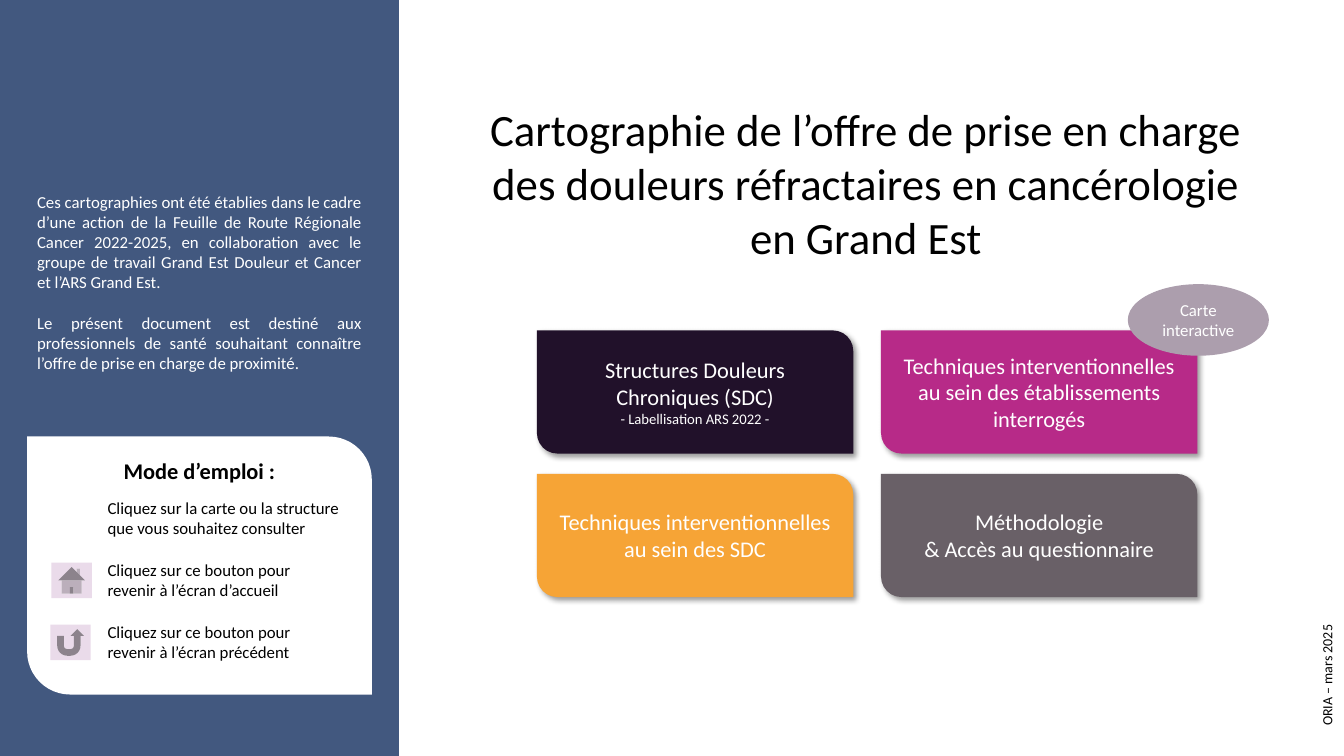
from dataclasses import dataclass

from lxml import etree
from pptx import Presentation
from pptx.dml.color import RGBColor
from pptx.enum.shapes import MSO_SHAPE
from pptx.enum.text import MSO_ANCHOR, MSO_AUTO_SIZE, PP_ALIGN
from pptx.oxml.ns import qn
from pptx.util import Pt

RECT, OVAL = MSO_SHAPE.RECTANGLE, MSO_SHAPE.OVAL
LEAF = MSO_SHAPE.ROUND_2_DIAG_RECTANGLE
HOME, BACK = MSO_SHAPE.ACTION_BUTTON_HOME, MSO_SHAPE.ACTION_BUTTON_RETURN
TOP, MIDDLE = MSO_ANCHOR.TOP, MSO_ANCHOR.MIDDLE
LEFT, CENTER, JUST = PP_ALIGN.LEFT, PP_ALIGN.CENTER, PP_ALIGN.JUSTIFY
GROW = MSO_AUTO_SIZE.SHAPE_TO_FIT_TEXT


@dataclass(frozen=True)
class Theme:
    """Colours, font and type sizes of the slide."""
    font: str = "Calibri"
    black: str = "000000"
    white: str = "FFFFFF"
    navy: str = "42587F"
    night: str = "21112A"
    pink: str = "B72A88"
    amber: str = "F6A436"
    grey: str = "696067"
    mauve: str = "AC9EAD"
    pale: str = "EADBEA"
    title: float = 32
    head: float = 16
    body: float = 12
    small: float = 10.5
    foot: float = 10


THEME = Theme()


def apply(item, values):
    """Set each attribute of item from a dict of values."""
    for name, value in values.items():
        setattr(item, name, value)


def write(shape, lines, color, align=CENTER, gap=0, bold=False, **frame):
    """Fill a shape with (text, size) paragraphs."""
    area = shape.text_frame
    apply(area, {"word_wrap": True, "vertical_anchor": MIDDLE, **frame})
    for i, (text, size) in enumerate(lines):
        para = area.add_paragraph() if i else area.paragraphs[0]
        apply(para, {"alignment": align, "space_before": Pt(gap if i else 0)})
        run = para.add_run()
        run.text = text
        apply(run.font, {"name": THEME.font, "size": Pt(size), "bold": bold})
        run.font.color.rgb = RGBColor.from_string(color)


def add_form(slide, kind, box, fill=None):
    """Add a preset shape without outline or shadow."""
    shape = slide.shapes.add_shape(kind, *map(Pt, box))
    shape.shadow.inherit = False
    shape.line.fill.background()
    if fill:
        shape.fill.solid()
        shape.fill.fore_color.rgb = RGBColor.from_string(fill)
    else:
        shape.fill.background()
    return shape


def add_leaf(slide, box, fill=None):
    """Add a shape rounded at top right and bottom left."""
    shape = add_form(slide, LEAF, box, fill)
    shape.adjustments[0], shape.adjustments[1] = 0, 0.16667
    return shape


def add_shade(shape):
    """Give a shape a soft shadow to the lower right."""
    effect = shape.element.spPr.find(qn("a:effectLst"))
    shade = etree.SubElement(effect, qn("a:outerShdw"), {
        "blurRad": str(Pt(4)), "dist": str(Pt(3)), "dir": "2700000",
        "algn": "tl", "rotWithShape": "0"})
    color = etree.SubElement(shade, qn("a:srgbClr"), val=THEME.black)
    etree.SubElement(color, qn("a:alpha"), val="40000")


def add_note(slide, box, lines, color, **form):
    """Add a text box that grows with its text."""
    note = slide.shapes.add_textbox(*map(Pt, box))
    write(note, lines, color, vertical_anchor=TOP, auto_size=GROW, **form)
    return note


def add_cards(slide):
    """Lay the four topic cards on a two by two grid."""
    head = THEME.head
    cards = [
        (THEME.night, [("Structures Douleurs Chroniques (SDC)", head),
                       ("- Labellisation ARS 2022 -", THEME.small)]),
        (THEME.pink, [("Techniques interventionnelles au sein des "
                       "établissements interrogés", head)]),
        (THEME.amber, [("Techniques interventionnelles au sein des SDC", head)]),
        (THEME.grey, [("Méthodologie", head),
                      ("& Accès au questionnaire", head)]),
    ]
    for i, (fill, lines) in enumerate(cards):
        row, col = divmod(i, 2)
        box = (383.5 + col * 245.8, 236 + row * 102.5, 226, 88)
        card = add_leaf(slide, box, fill)
        add_shade(card)
        write(card, lines, THEME.white)


def add_guide(slide):
    """Add the panel of instructions with its two buttons."""
    panel = add_leaf(slide, (19.4, 311.8, 246.2, 184.3), THEME.white)
    write(panel, [("Mode d’emploi :", THEME.head)], THEME.black, bold=True,
          vertical_anchor=TOP, margin_top=Pt(6))
    steps = [
        (None, 0, 200, "Cliquez sur la carte ou la structure que vous souhaitez consulter"),
        (HOME, 36.8, 172, "Cliquez sur ce bouton pour revenir à l’écran d’accueil"),
        (BACK, 36, 172, "Cliquez sur ce bouton pour revenir à l’écran précédent"),
    ]
    for i, (icon, left, width, text) in enumerate(steps):
        top = 352.2 + i * 44.3
        add_note(slide, (69.8, top, width, 36), [(text, THEME.body)],
                 THEME.black, align=LEFT)
        if icon:
            add_form(slide, icon, (left, top + 5.4, 28.8, 25.4), THEME.pale)


def main():
    """Build the slide and save it."""
    deck = Presentation()
    apply(deck, {"slide_width": Pt(960), "slide_height": Pt(540)})
    slide = deck.slides.add_slide(deck.slide_layouts[6])

    title = add_leaf(slide, (334.8, 69.2, 567.4, 122.4))
    write(title, [("Cartographie de l’offre de prise en charge des douleurs "
                   "réfractaires en cancérologie en Grand Est", THEME.title)],
          THEME.black)
    add_cards(slide)
    badge = add_form(slide, OVAL, (805.6, 203, 100.8, 51.1), THEME.mauve)
    write(badge, [("Carte interactive", THEME.body)], THEME.white)

    add_form(slide, RECT, (0, 0, 285, 540), THEME.navy)
    intro = [
        "Ces cartographies ont été établies dans le cadre d’une action de la "
        "Feuille de Route Régionale Cancer 2022-2025, en collaboration avec le "
        "groupe de travail Grand Est Douleur et Cancer et l’ARS Grand Est.",
        "Le présent document est destiné aux professionnels de santé "
        "souhaitant connaître l’offre de prise en charge de proximité.",
    ]
    add_note(slide, (19.4, 133.2, 246.2, 138.2),
             [(text, THEME.body) for text in intro], THEME.white,
             align=JUST, gap=14.5)
    add_guide(slide)

    date = add_note(slide, (938.2, 424.8, 26.6, 115.2),
                    [("ORIA – mars 2025", THEME.foot)], THEME.black)
    date.element.txBody.find(qn("a:bodyPr")).set("vert", "vert270")
    deck.save("out.pptx")


if __name__ == "__main__":
    main()
